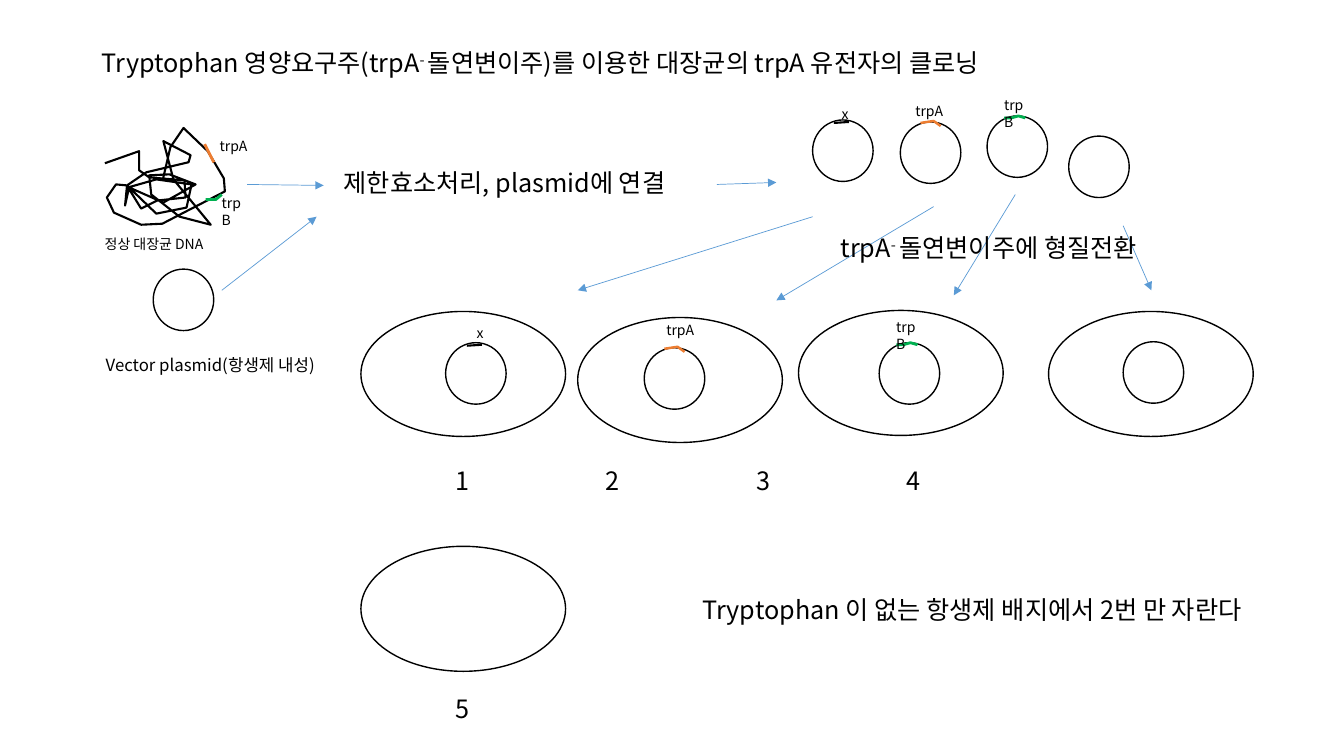
from lxml.etree import SubElement
from pptx import Presentation
from pptx.dml.color import RGBColor
from pptx.enum.shapes import MSO_CONNECTOR, MSO_SHAPE
from pptx.enum.text import MSO_ANCHOR, MSO_AUTO_SIZE, PP_ALIGN
from pptx.oxml.ns import qn
from pptx.util import Pt

PX = 9144
FONT = "Noto Sans CJK KR"
BLACK, WHITE, ORANGE, GREEN, BLUE = "000000", "FFFFFF", "ED7D31", "00B050", "5B9BD5"

TITLE = ["Tryptophan 영양요구주(trpA", "- ", "돌연변이주)를 이용한 대장균의 trpA 유전자의 클로닝"]
TITLE_BOX = (91, 42, 965, 40)

PLASMID_SIZE = (60, 61)
CELL_SIZE = (203, 124)
CELLS = [(358, 309), (358, 542), (573, 315), (792, 308), (1040, 309)]
EMPTY_PLASMIDS = [(152, 267), (1060, 135), (1114, 339)]

GENES = [
    {"name": "x", "color": BLACK, "weight": 1.5, "label_width": 27,
     "mark": [(21, 3), (36, 2)],
     "plasmids": [(806, 119), (442, 340)], "labels": [(825, 100), (463, 317)]},
    {"name": "trpA", "color": ORANGE, "weight": 1.75, "label_width": 48,
     "mark": [(20, 1), (33, -1), (40, 4)],
     "plasmids": [(893, 121), (639, 345)], "labels": [(898, 97), (651, 314), (208, 132)]},
    {"name": "trpB", "color": GREEN, "weight": 2, "label_width": 47,
     "mark": [(17, 2), (24, 2), (31, 0), (38, 2)],
     "plasmids": [(979, 115), (872, 340)], "labels": [(986, 91), (879, 311), (210, 188)]},
]

GENOME = [
    (104, 162), (138, 150), (138, 169), (148, 176), (183, 179), (184, 196), (156, 199),
    (140, 207), (127, 186), (155, 178), (190, 183), (185, 206), (155, 212), (126, 184),
    (145, 171), (187, 161), (189, 154), (162, 140), (172, 178), (209, 223), (178, 215),
    (150, 193), (148, 174), (168, 173), (194, 183), (162, 201), (128, 186), (124, 204),
    (126, 184), (115, 183), (106, 196), (113, 211), (140, 223), (161, 222), (190, 207),
    (223, 190), (222, 177), (206, 150), (182, 127), (169, 146), (162, 176),
]
GENOME_TRPA = [(203, 143), (212, 161)]
GENOME_TRPB = [(204, 198), (214, 198), (220, 193)]

ARROWS = [
    ((245, 183), (321, 184)), ((220, 288), (314, 215)), ((711, 183), (770, 181)),
    ((806, 215), (573, 288)), ((926, 205), (770, 298)),
    ((1007, 193), (946, 293)), ((1114, 224), (1142, 288)),
]

CAPTIONS = [
    ((331, 161, 369, 40), 18, ["제한효소처리, plasmid에 연결"]),
    ((95, 347, 234, 30), 12, ["Vector plasmid(항생제 내성)"]),
    ((94, 229, 130, 27), 10, ["정상 대장균 DNA"]),
    ((442, 683, 34, 40), 18, ["5"]),
    ((824, 226, 356, 40), 18, ["trpA", "- ", "돌연변이주에 형질전환"]),
    ((687, 585, 605, 40), 18, ["Tryptophan 이 없는 항생제 배지에서 2번 만 자란다"]),
]
CELL_NUMBERS = "1\t2\t3\t4"
NUMBERS_BOX = (442, 457, 728, 40)
NUMBER_TABS = [149 * step for step in range(1, 4)]


def rgb(color):
    return RGBColor.from_string(color)


def emu(*lengths):
    return [length * PX for length in lengths]


def write(runs, box, size=18, color=BLACK, holder=None, tabs=()):
    holder = holder or slide.shapes.add_textbox(*emu(*box))
    holder.left, holder.top, holder.width, holder.height = emu(*box)
    frame = holder.text_frame
    frame.word_wrap = True
    frame.auto_size = MSO_AUTO_SIZE.SHAPE_TO_FIT_TEXT
    frame.vertical_anchor = MSO_ANCHOR.TOP
    line = frame.paragraphs[0]
    line.alignment = PP_ALIGN.LEFT
    if tabs:
        stops = SubElement(line._p.get_or_add_pPr(), qn("a:tabLst"))
        for tab in tabs:
            SubElement(stops, qn("a:tab"), pos=str(tab * PX), algn="l")
    for index, words in enumerate(runs):
        run = line.add_run()
        run.text = words
        run.font.size = Pt(size)
        run.font.name = FONT
        run.font.color.rgb = rgb(color)
        props = run.font._element
        SubElement(props, qn("a:ea"), typeface=FONT)
        if index == 1:
            props.set("baseline", "30000")


def oval(corner, size):
    ring = slide.shapes.add_shape(MSO_SHAPE.OVAL, *emu(*corner, *size))
    ring.shadow.inherit = False
    ring.fill.solid()
    ring.fill.fore_color.rgb = rgb(WHITE)
    ring.line.color.rgb = rgb(BLACK)
    ring.line.width = Pt(1)


def stroke(points, color, weight):
    builder = slide.shapes.build_freeform(*points[0], scale=PX)
    builder.add_line_segments(points[1:], close=False)
    strand = builder.convert_to_shape()
    strand.shadow.inherit = False
    strand.fill.background()
    strand.line.color.rgb = rgb(color)
    strand.line.width = Pt(weight)


def arrow(start, end):
    link = slide.shapes.add_connector(MSO_CONNECTOR.STRAIGHT, *emu(*start, *end))
    link.line.color.rgb = rgb(BLUE)
    link.line.width = Pt(0.5)
    SubElement(link.line._get_or_add_ln(), qn("a:tailEnd"), type="triangle")
    SubElement(link._element.spPr, qn("a:effectLst"))


deck = Presentation()
deck.slide_width, deck.slide_height = emu(1333, 750)
slide = deck.slides.add_slide(deck.slide_layouts[5])
write(TITLE, TITLE_BOX, holder=slide.shapes.title)

stroke(GENOME, BLACK, 1.5)
stroke(GENOME_TRPA, ORANGE, 2)
stroke(GENOME_TRPB, GREEN, 2)

for cell in CELLS:
    oval(cell, CELL_SIZE)
for plasmid in EMPTY_PLASMIDS:
    oval(plasmid, PLASMID_SIZE)
for gene in GENES:
    for left, top in gene["plasmids"]:
        oval((left, top), PLASMID_SIZE)
        stroke([(left + x, top + y) for x, y in gene["mark"]], gene["color"], gene["weight"])
    for label in gene["labels"]:
        write([gene["name"]], (*label, gene["label_width"], 27), size=10)

for start, end in ARROWS:
    arrow(start, end)
for box, size, runs in CAPTIONS:
    write(runs, box, size=size)
write([CELL_NUMBERS], NUMBERS_BOX, tabs=NUMBER_TABS)

deck.save("out.pptx")
